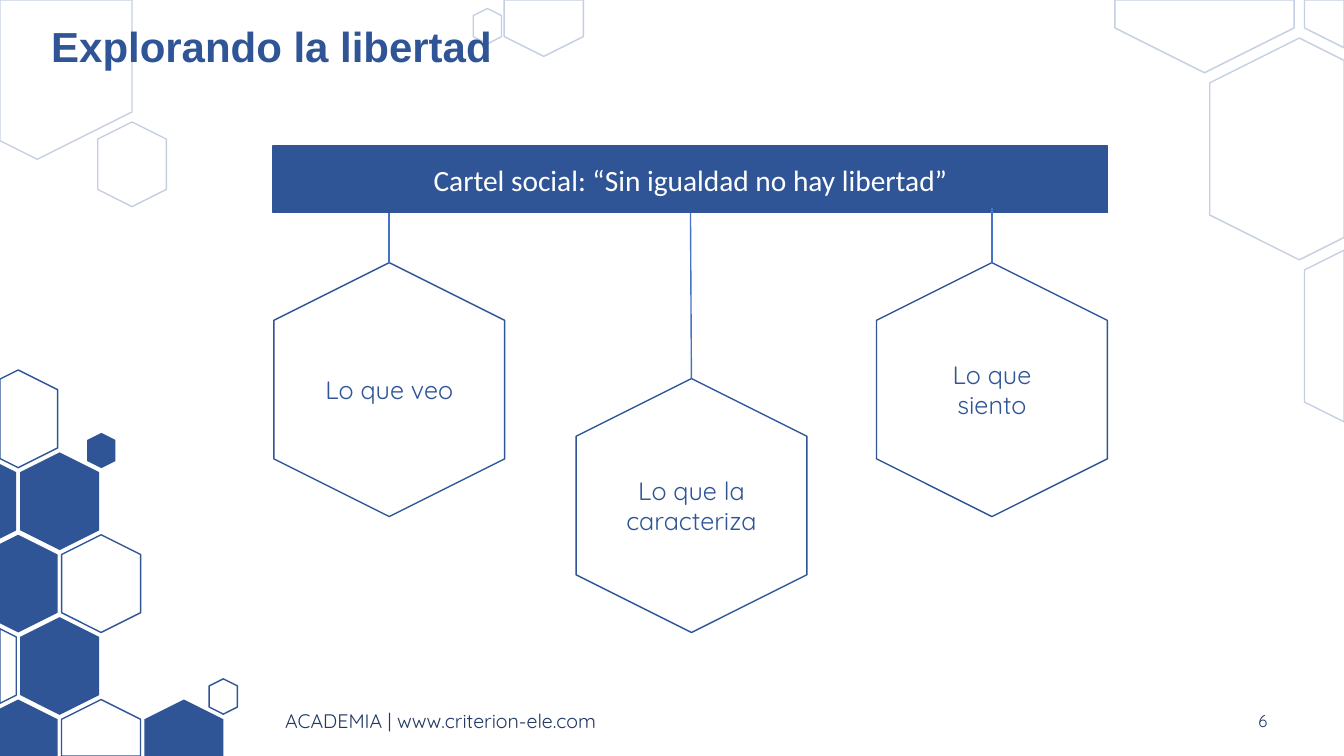
"""Build a slide with a social slogan and three hexagons that explore it."""
from dataclasses import dataclass
from typing import Any, Optional

from lxml import etree
from pptx import Presentation
from pptx.dml.color import RGBColor
from pptx.enum.shapes import MSO_CONNECTOR, MSO_SHAPE
from pptx.enum.text import MSO_ANCHOR, PP_ALIGN
from pptx.oxml.ns import qn
from pptx.util import Pt

HEXAGON, RECTANGLE = MSO_SHAPE.HEXAGON, MSO_SHAPE.RECTANGLE
STRAIGHT = MSO_CONNECTOR.STRAIGHT
MIDDLE = MSO_ANCHOR.MIDDLE
LEFT, CENTER, RIGHT = PP_ALIGN.LEFT, PP_ALIGN.CENTER, PP_ALIGN.RIGHT
SLIDE_WIDTH, SLIDE_HEIGHT = 960, 540

Point = tuple[float, float]


@dataclass(frozen=True)
class Theme:
    blue: RGBColor = RGBColor(0x2F, 0x55, 0x97)
    navy: RGBColor = RGBColor(0x20, 0x38, 0x64)
    link: RGBColor = RGBColor(0x44, 0x72, 0xC4)
    white: RGBColor = RGBColor(0xFF, 0xFF, 0xFF)
    title_size: int = 30
    banner_size: int = 21
    body_size: int = 18
    footer_size: int = 14
    number_size: int = 12
    line_width: int = 1
    pale_alpha: int = 28000


THEME = Theme()


@dataclass(frozen=True)
class TextStyle:
    size: int
    color: RGBColor
    name: str = "Quicksand"
    alignment: Any = LEFT
    bold: bool = False
    line_spacing: Optional[float] = None


@dataclass(frozen=True)
class Box:
    left: float
    top: float
    width: float
    height: float

    def lengths(self) -> list[int]:
        return [Pt(value) for value in (self.left, self.top, self.width, self.height)]


@dataclass(frozen=True)
class Hexagon:
    x: float
    y: float
    width: float
    height: float
    fill: RGBColor = THEME.white
    line: Optional[RGBColor] = THEME.blue
    pale: bool = False

    def corners(self) -> list[Point]:
        half, tip = self.width / 2, self.height / 2
        shoulder = tip - self.width / 4
        offsets = [(0, -tip), (half, -shoulder), (half, shoulder),
                   (0, tip), (-half, shoulder), (-half, -shoulder)]
        return [(self.x + across, self.y + down) for across, down in offsets]


@dataclass(frozen=True)
class Topic:
    text: str
    x: float
    y: float
    link_x: float
    link_top: float


def write(shape: Any, text: str, style: TextStyle) -> None:
    frame = shape.text_frame
    for name, value in {"word_wrap": True, "vertical_anchor": MIDDLE}.items():
        setattr(frame, name, value)
    paragraph = frame.paragraphs[0]
    paragraph.alignment = style.alignment
    if style.line_spacing:
        paragraph.line_spacing = style.line_spacing
    run = paragraph.add_run()
    run.text = text
    formats = {"name": style.name, "size": Pt(style.size), "bold": style.bold}
    for name, value in formats.items():
        setattr(run.font, name, value)
    run.font.color.rgb = style.color


def paint(shape: Any, fill: RGBColor, line: Optional[RGBColor], pale: bool = False) -> None:
    shape.shadow.inherit = False
    shape.fill.solid()
    shape.fill.fore_color.rgb = fill
    if line is None:
        shape.line.fill.background()
        return
    shape.line.color.rgb = line
    shape.line.width = Pt(THEME.line_width)
    if pale:
        color = shape.element.spPr.find(qn("a:ln")).find(".//" + qn("a:srgbClr"))
        etree.SubElement(color, qn("a:alpha")).set("val", str(THEME.pale_alpha))


def clip(corners: list[Point], axis: int, limit: float, sign: int) -> list[Point]:
    kept: list[Point] = []
    for start, end in zip(corners[-1:] + corners[:-1], corners):
        before, after = sign * (limit - start[axis]), sign * (limit - end[axis])
        if (before >= 0) != (after >= 0):
            share = before / (before - after)
            kept.append((start[0] + share * (end[0] - start[0]),
                         start[1] + share * (end[1] - start[1])))
        if after >= 0:
            kept.append(end)
    return kept


def add_hexagon(slide: Any, hexagon: Hexagon) -> Any:
    corners = hexagon.corners()
    clipped = corners
    for axis, limit, sign in ((0, 0, -1), (0, SLIDE_WIDTH, 1),
                              (1, 0, -1), (1, SLIDE_HEIGHT, 1)):
        clipped = clip(clipped, axis, limit, sign)
    if clipped == corners:
        box = Box(hexagon.x - hexagon.height / 2, hexagon.y - hexagon.width / 2,
                  hexagon.height, hexagon.width)
        shape = slide.shapes.add_shape(HEXAGON, *box.lengths())
        shape.rotation = 90
    else:
        points = [(Pt(x), Pt(y)) for x, y in clipped]
        builder = slide.shapes.build_freeform(*points[0], scale=1.0)
        builder.add_line_segments(points[1:], close=True)
        shape = builder.convert_to_shape()
    paint(shape, hexagon.fill, hexagon.line, hexagon.pale)
    return shape


def add_text(slide: Any, box: Box, text: str, style: TextStyle) -> None:
    write(slide.shapes.add_textbox(*box.lengths()), text, style)


def add_link(slide: Any, start: Point, end: Point) -> None:
    connector = slide.shapes.add_connector(STRAIGHT, *(Pt(value) for value in start + end))
    connector.line.color.rgb = THEME.link
    connector.line.width = Pt(THEME.line_width)
    etree.SubElement(connector.element.spPr, qn("a:effectLst"))


def background_hexagons() -> list[Hexagon]:
    pale = [Hexagon(348.1, 18.7, 20.2, 25.2, pale=True),
            Hexagon(388.4, 5.4, 56.6, 69.8, pale=True)]
    pale += [Hexagon(860.4 + 67.7 * column, -27.2 + 133.6 * row, 128, 158.4, pale=True)
             for column, row in ((0, 0), (2, 0), (1, 1), (2, 2))]
    pale += [Hexagon(26.6, 30.3, 135.4, 167, pale=True),
             Hexagon(94.3, 117.4, 49, 60.5, pale=True)]
    open_cells = [(0, 0), (2, 2), (-1, 3), (2, 4)]
    solid_cells = [(-1, 1), (1, 1), (0, 2), (1, 3), (0, 4), (4, 4)]
    solid = {"fill": THEME.blue, "line": None}
    comb = [Hexagon(13 + 29.6 * column, 299.2 + 58.85 * row, 56.4, 69.8, **look)
            for cells, look in ((open_cells, {}), (solid_cells, solid))
            for column, row in cells]
    small = [Hexagon(159.5, 497.5, 20.2, 25.2),
             Hexagon(72.4, 321.8, 20.2, 25.2, **solid)]
    return pale + comb + small


def main() -> None:
    presentation = Presentation()
    presentation.slide_width, presentation.slide_height = Pt(SLIDE_WIDTH), Pt(SLIDE_HEIGHT)
    slide = presentation.slides.add_slide(presentation.slide_layouts[6])
    for hexagon in background_hexagons():
        add_hexagon(slide, hexagon)

    add_text(slide, Box(196.6, 500.4, 470.2, 28.8), "ACADEMIA | www.criterion-ele.com",
             TextStyle(THEME.footer_size, THEME.navy))
    add_text(slide, Box(841, 500.4, 71.3, 28.8), "6",
             TextStyle(THEME.number_size, THEME.navy, alignment=RIGHT))
    add_text(slide, Box(29.5, 13, 832.3, 43.2), "Explorando la libertad",
             TextStyle(THEME.title_size, THEME.blue, "Arial", bold=True, line_spacing=0.9))

    banner = slide.shapes.add_shape(RECTANGLE, *Box(195.1, 104.4, 596.2, 47.5).lengths())
    paint(banner, THEME.blue, THEME.blue)
    write(banner, "Cartel social: “Sin igualdad no hay libertad”",
          TextStyle(THEME.banner_size, THEME.white, "Calibri", CENTER))

    topic_style = TextStyle(THEME.body_size, THEME.blue, alignment=CENTER)
    for topic in (Topic("Lo que veo", 278, 278.3, 278, 151.9),
                  Topic("Lo que la caracteriza", 493.9, 361.1, 493.2, 151.9),
                  Topic("Lo que siento", 708.5, 278.3, 708.5, 148.3)):
        hexagon = Hexagon(topic.x, topic.y, 164.9, 181.4)
        shape = add_hexagon(slide, hexagon)
        write(shape, topic.text, topic_style)
        shape.element.txBody.bodyPr.set("vert", "vert270")
        add_link(slide, (topic.link_x, topic.link_top), hexagon.corners()[0])
    presentation.save("out.pptx")


if __name__ == "__main__":
    main()
